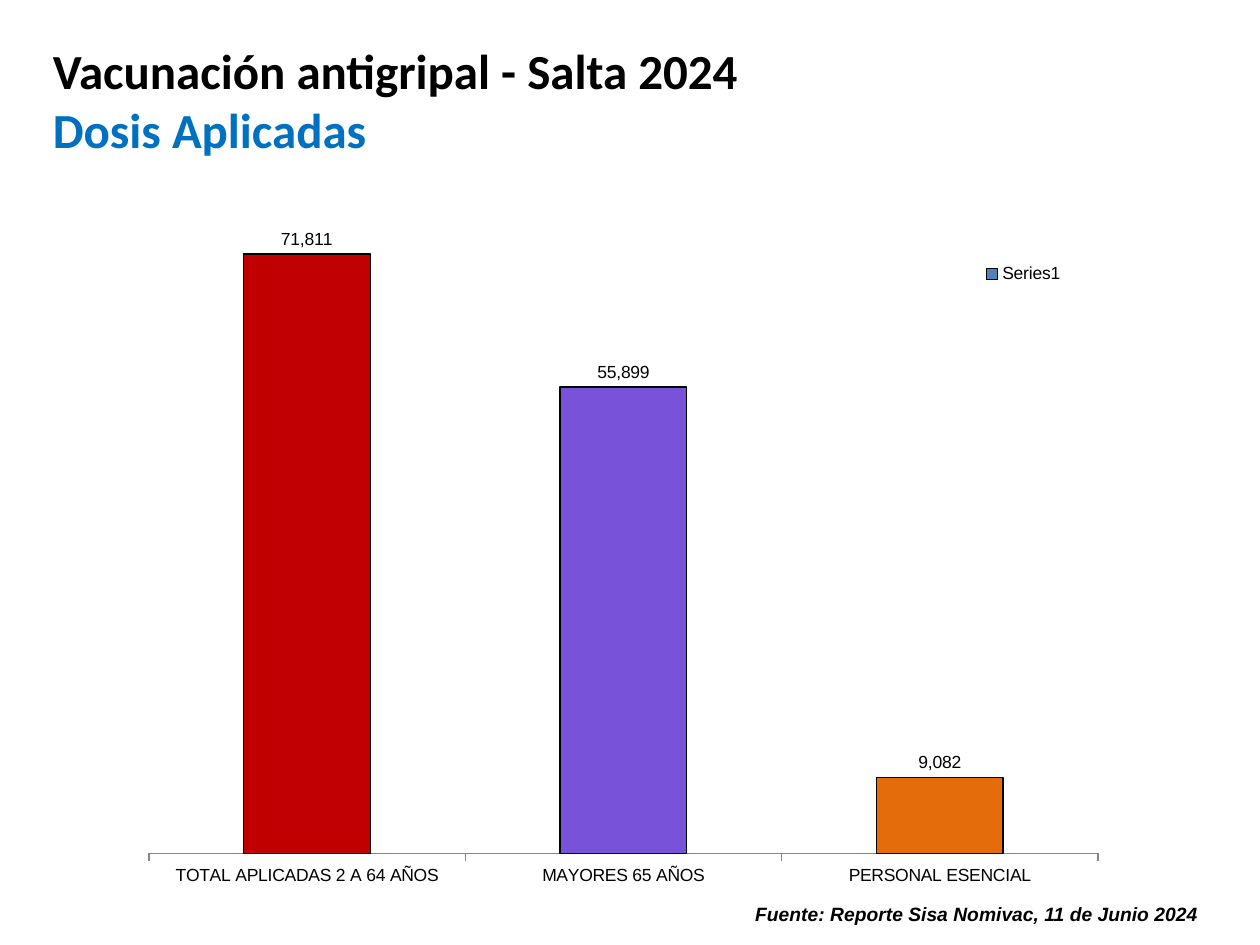
import dataclasses

import pptx
import pptx.chart.data
import pptx.dml.color
import pptx.enum.chart
import pptx.enum.text
import pptx.oxml
import pptx.oxml.ns
import pptx.util

Pt = pptx.util.Pt
RGB = pptx.dml.color.RGBColor.from_string


@dataclasses.dataclass(frozen=True)
class Theme:
    """Colours, fonts and type sizes of the slide."""
    ink: str = "000000"
    blue: str = "0070C0"
    axis: str = "868686"
    base: str = "4F81BD"
    bars: tuple = ("C00000", "7952DA", "E46C0A")
    head: str = "Calibri"
    body: str = "Arial"
    big: float = 28
    note: float = 11
    small: float = 10


THEME = Theme()
DOSES = {
    "TOTAL APLICADAS 2 A 64 AÑOS": 71811,
    "MAYORES 65 AÑOS": 55899,
    "PERSONAL ESENCIAL": 9082,
}


def style(font, name, size, color, bold=False, italic=False):
    """Set the face, size and colour of a font."""
    font.name, font.size = name, Pt(size)
    font.bold, font.italic = bold, italic
    font.color.rgb = RGB(color)


def place(shape, box):
    """Move a shape to a box of left, top, width and height in points."""
    shape.left, shape.top, shape.width, shape.height = map(Pt, box)


def outline(part, color):
    """Draw a thin line of one colour around or along a chart part."""
    part.format.line.color.rgb = RGB(color)
    part.format.line.width = Pt(0.75)


def layout(part, after, mode, **sizes):
    """Give a chart part a manual layout in fractions of the chart."""
    tags = "".join(f'<c:{key} val="{val}"/>' for key, val in sizes.items())
    xml = (
        f'<c:layout {pptx.oxml.ns.nsdecls("c")}><c:manualLayout>{mode}'
        f'<c:xMode val="edge"/><c:yMode val="edge"/>{tags}'
        "</c:manualLayout></c:layout>"
    )
    for old in part.findall(pptx.oxml.ns.qn("c:layout")):
        part.remove(old)
    spot = 0 if after is None else part.index(after) + 1
    part.insert(spot, pptx.oxml.parse_xml(xml))


def add_title(slide, box):
    """Fill the title placeholder with its two coloured lines."""
    title = slide.shapes.title
    place(title, box)
    frame = title.text_frame
    frame.auto_size = pptx.enum.text.MSO_AUTO_SIZE.NONE
    frame.vertical_anchor = pptx.enum.text.MSO_ANCHOR.TOP
    frame.text = "Vacunación antigripal - Salta 2024\nDosis Aplicadas"
    for para, color in zip(frame.paragraphs, (THEME.ink, THEME.blue)):
        para.alignment = pptx.enum.text.PP_ALIGN.LEFT
        style(para.font, THEME.head, THEME.big, color, bold=True)


def add_doses(slide, box):
    """Add the column chart of applied doses."""
    data = pptx.chart.data.CategoryChartData(number_format="#,##0")
    data.categories = list(DOSES)
    data.add_series("Series1", list(DOSES.values()))
    kind = pptx.enum.chart.XL_CHART_TYPE.COLUMN_CLUSTERED
    chart = slide.shapes.add_chart(kind, *map(Pt, box), data).chart
    style(chart.font, THEME.body, THEME.small, THEME.ink)
    chart.has_title = False

    chart.value_axis.visible = False
    chart.value_axis.has_major_gridlines = False
    chart.value_axis.minimum_scale = 0
    chart.value_axis.maximum_scale = 80000
    axis = chart.category_axis
    axis.major_tick_mark = pptx.enum.chart.XL_TICK_MARK.OUTSIDE
    outline(axis, THEME.axis)

    plot = chart.plots[0]
    plot.gap_width = 150
    plot.vary_by_categories = False
    bars = plot.series[0]
    bars.format.fill.solid()
    bars.format.fill.fore_color.rgb = RGB(THEME.base)
    outline(bars, THEME.ink)
    for spot, color in enumerate(THEME.bars):
        point = bars.points[spot]
        point.format.fill.solid()
        point.format.fill.fore_color.rgb = RGB(color)
        outline(point, THEME.ink)
    labels = bars.data_labels
    labels.show_value = True
    labels.position = pptx.enum.chart.XL_LABEL_POSITION.OUTSIDE_END
    labels.number_format = "#,##0"
    labels.number_format_is_linked = False

    chart.has_legend = True
    legend = chart.legend
    legend.position = pptx.enum.chart.XL_LEGEND_POSITION.RIGHT
    legend.include_in_layout = False
    root = legend._element
    layout(root, root.find(pptx.oxml.ns.qn("c:legendPos")), "",
           x=0.78, y=0.15, w=0.09, h=0.06)
    area = chart._chartSpace.chart.plotArea
    layout(area, None, '<c:layoutTarget val="inner"/>',
           x=0.12, y=0.064, w=0.765, h=0.88)


def add_note(slide, box):
    """Add the line that names the source of the data."""
    note = slide.shapes.add_textbox(*map(Pt, box))
    note.text_frame.word_wrap = True
    para = note.text_frame.paragraphs[0]
    para.text = "Fuente: Reporte Sisa Nomivac, 11 de Junio 2024"
    style(para.font, THEME.body, THEME.note, THEME.ink, True, True)


def main():
    """Build the slide and save it."""
    deck = pptx.Presentation()
    deck.slide_width, deck.slide_height = Pt(720), Pt(540)
    slide = deck.slides.add_slide(deck.slide_layouts[5])
    add_title(slide, (23, 19.5, 420, 75))
    add_note(slide, (424.5, 512, 285.5, 19.5))
    add_doses(slide, (0, 78.5, 709, 433.5))
    deck.save("out.pptx")


if __name__ == "__main__":
    main()
